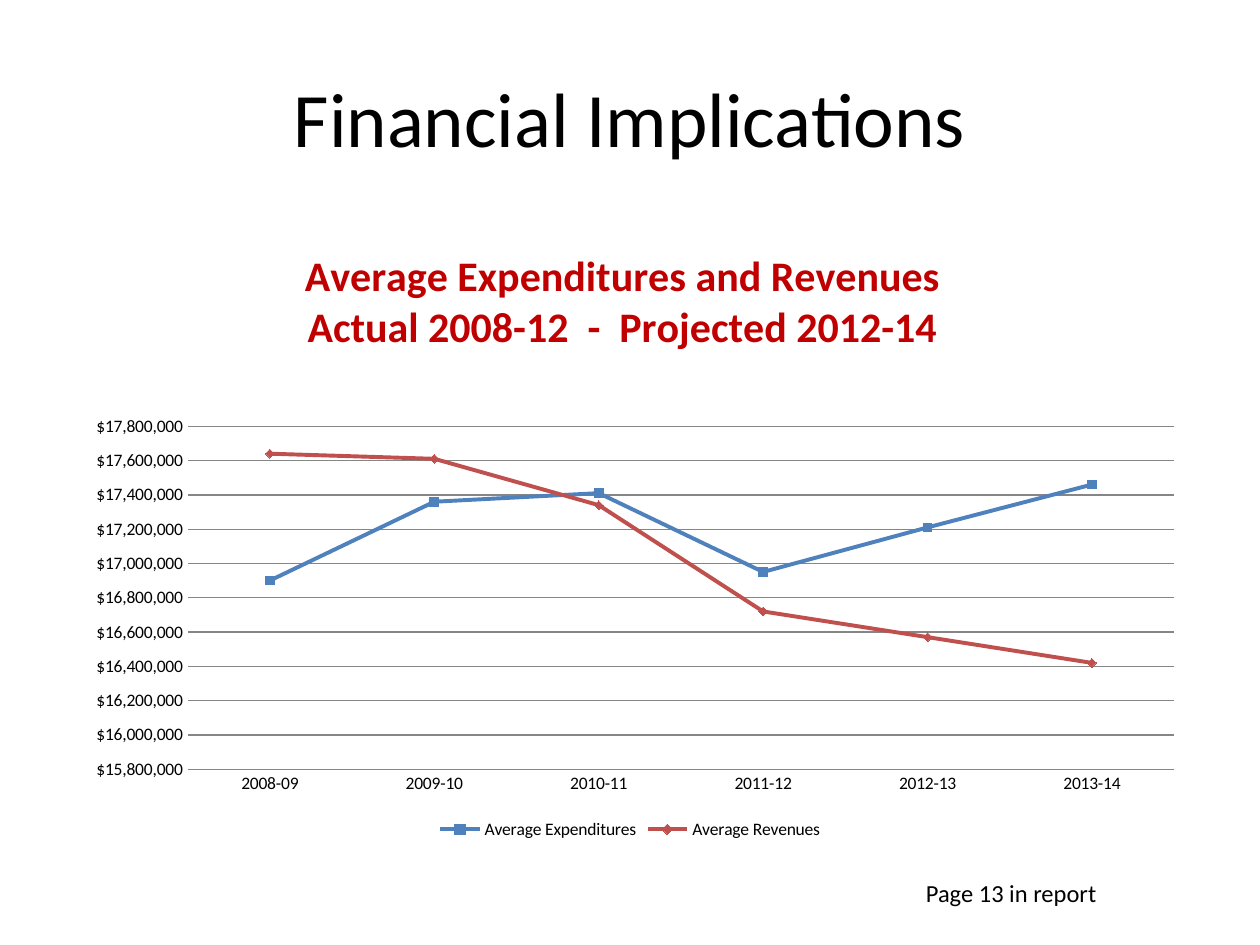
import dataclasses
import pptx
import pptx.chart.data
import pptx.dml.color
import pptx.enum.chart
import pptx.enum.text
import pptx.oxml
import pptx.oxml.ns
import pptx.util

Inches = pptx.util.Inches
Pt = pptx.util.Pt
Color = pptx.dml.color.RGBColor.from_string
Mark = pptx.enum.chart.XL_MARKER_STYLE
Tick = pptx.enum.chart.XL_TICK_MARK
Align = pptx.enum.text.PP_ALIGN
Anchor = pptx.enum.text.MSO_ANCHOR


@dataclasses.dataclass(frozen=True)
class Theme:
    font: str = "Calibri"
    ink: str = "000000"
    head: str = "C00000"
    grid: str = "868686"
    spend: str = "4F81BD"
    gain: str = "C0504D"
    title: int = 44
    sub: int = 24
    note: int = 14
    label: int = 10


def apply(target, **values):
    for name, value in values.items():
        setattr(target, name, value)


def place(node, inner=False, **spots):
    modes = "".join(f'<c:{side}Mode val="edge"/>' for side in "xy")
    sizes = "".join(f'<c:{side} val="{spot}"/>' for side, spot in spots.items())
    target = '<c:layoutTarget val="inner"/>' if inner else ""
    layout = pptx.oxml.parse_xml(
        f'<c:layout {pptx.oxml.ns.nsdecls("c")}><c:manualLayout>'
        f"{target}{modes}{sizes}</c:manualLayout></c:layout>"
    )
    for old in node.findall(pptx.oxml.ns.qn("c:layout")):
        node.remove(old)
    text = node.find(pptx.oxml.ns.qn("c:tx"))
    if text is None:
        node.insert(0, layout)
    else:
        text.addnext(layout)


@dataclasses.dataclass
class Page:
    theme: Theme
    slide: object

    def style(self, font, size, color, bold=False):
        apply(font, name=self.theme.font, size=Pt(size), bold=bold)
        font.color.rgb = Color(color)

    def text(self, box, words, size, **frame):
        shape = self.slide.shapes.add_textbox(*map(Inches, box))
        body = shape.text_frame
        align = frame.pop("align", Align.LEFT)
        apply(body, word_wrap=True, **frame)
        line = body.paragraphs[0]
        apply(line, text=words, alignment=align)
        self.style(line.runs[0].font, size, self.theme.ink)

    def chart(self, box, heads, years, rows):
        data = pptx.chart.data.CategoryChartData(number_format='"$"#,##0')
        data.categories = years
        for name, values, *_ in rows:
            data.add_series(name, values)
        kind = pptx.enum.chart.XL_CHART_TYPE.LINE_MARKERS
        chart = self.slide.shapes.add_chart(kind, *map(Inches, box), data).chart
        self.style(chart.font, self.theme.label, self.theme.ink)
        chart.plots[0].vary_by_categories = False
        self.head(chart, heads)
        self.axes(chart)
        for line, (_, _, color, mark) in zip(chart.plots[0].series, rows):
            self.line(line, color, mark)
        chart.has_legend = True
        apply(
            chart.legend,
            position=pptx.enum.chart.XL_LEGEND_POSITION.BOTTOM,
            include_in_layout=False,
        )
        plot = chart.plots[0]._element.getparent()
        place(plot, inner=True, x=0.11, y=0.33, w=0.87, h=0.55)

    def head(self, chart, heads):
        chart.has_title = True
        title = chart.chart_title
        title.include_in_layout = False
        body = title.text_frame
        body.text = "\n".join(heads)
        for line in body.paragraphs:
            line.alignment = Align.CENTER
            self.style(line.runs[0].font, self.theme.sub, self.theme.head, True)
        place(title._element, x=0.21, y=0.04)

    def axes(self, chart):
        ticks = {"major_tick_mark": Tick.NONE, "minor_tick_mark": Tick.NONE}
        years, money = chart.category_axis, chart.value_axis
        apply(years, **ticks)
        apply(
            money,
            minimum_scale=15_800_000,
            maximum_scale=17_800_000,
            major_unit=200_000,
            has_major_gridlines=True,
            **ticks,
        )
        apply(money.tick_labels, number_format='"$"#,##0', number_format_is_linked=False)
        money.format.line.fill.background()
        for rule in (years.format.line, money.major_gridlines.format.line):
            rule.color.rgb = Color(self.theme.grid)
            rule.width = Pt(0.75)

    def line(self, line, color, mark):
        line.smooth = False
        line.format.line.width = Pt(2.25)
        line.format.line.color.rgb = Color(color)
        apply(line.marker, style=mark, size=5)
        line.marker.format.fill.solid()
        line.marker.format.fill.fore_color.rgb = Color(color)
        line.marker.format.line.color.rgb = Color(color)


def main():
    deck = pptx.Presentation()
    apply(deck, slide_width=Inches(10), slide_height=Inches(7.5))
    theme = Theme()
    page = Page(theme, deck.slides.add_slide(deck.slide_layouts[6]))
    page.text(
        (0.5, 0.3, 9, 1.25), "Financial Implications", theme.title,
        align=Align.CENTER, vertical_anchor=Anchor.MIDDLE,
    )
    spend = [16_900_000, 17_360_000, 17_410_000, 16_950_000, 17_210_000, 17_460_000]
    gain = [17_640_000, 17_610_000, 17_340_000, 16_720_000, 16_570_000, 16_420_000]
    page.chart(
        (0.5, 1.75, 9, 4.95),
        ["Average Expenditures and Revenues", "Actual 2008-12  -  Projected 2012-14"],
        [f"{year}-{year % 100 + 1:02}" for year in range(2008, 2014)],
        [
            ("Average Expenditures", spend, theme.spend, Mark.SQUARE),
            ("Average Revenues", gain, theme.gain, Mark.DIAMOND),
        ],
    )
    page.text((7.25, 6.92, 2.17, 0.34), "Page 13 in report", theme.note)
    deck.save("out.pptx")


if __name__ == "__main__":
    main()
